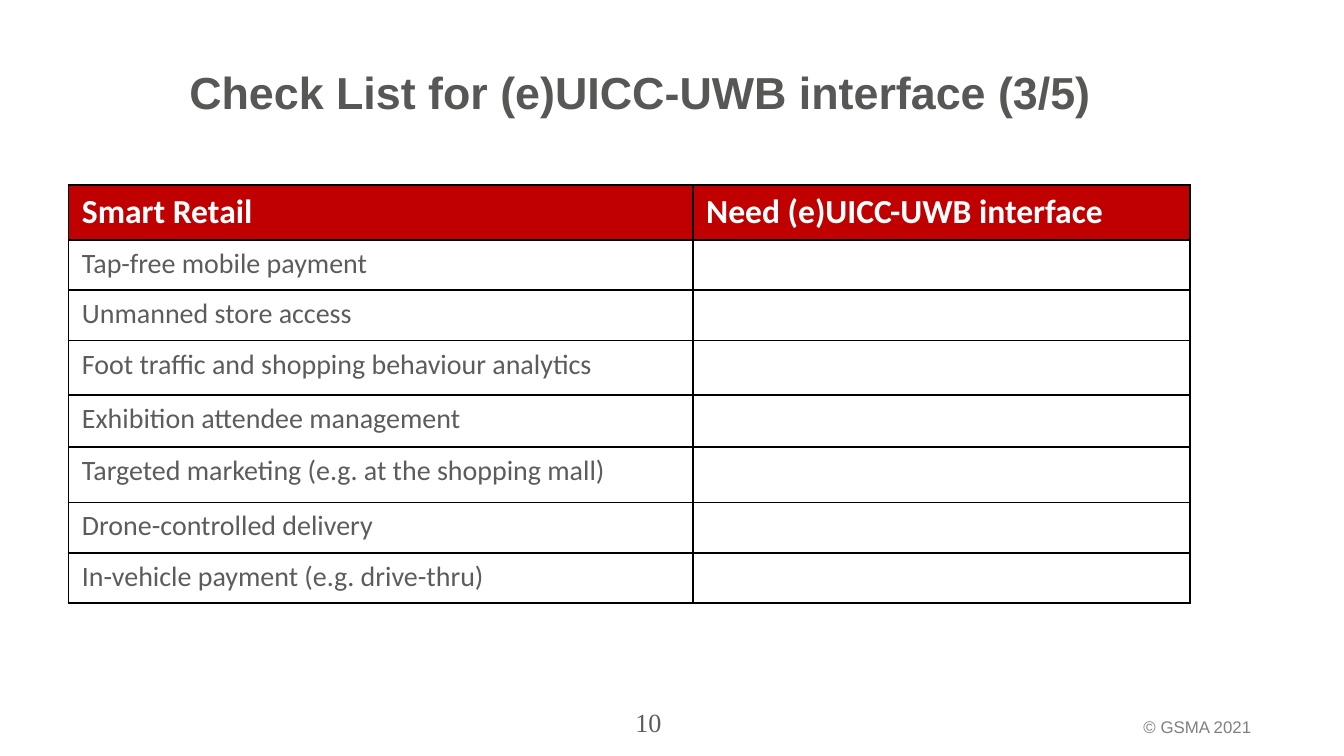
from dataclasses import dataclass

from lxml import etree
from pptx import Presentation
from pptx.dml.color import RGBColor
from pptx.enum import text
from pptx.oxml import ns
from pptx.slide import Slide
from pptx.table import _Cell
from pptx.util import Emu, Pt

PX = 4572  # 200 px to the inch

WHITE = RGBColor(0xFF, 0xFF, 0xFF)
RED = RGBColor(0xC0, 0x00, 0x00)
TITLE_GREY = RGBColor(0x57, 0x57, 0x56)
TEXT_GREY = RGBColor(0x5C, 0x5C, 0x5C)
FOOTER_GREY = RGBColor(0x80, 0x80, 0x80)
BORDER_COLOR = "000000"

HEADINGS = ("Smart Retail", "Need (e)UICC-UWB interface")
USE_CASES = (
    "Tap-free mobile payment",
    "Unmanned store access",
    "Foot traffic and shopping behaviour analytics",
    "Exhibition attendee management",
    "Targeted marketing (e.g. at the shopping mall)",
    "Drone-controlled delivery",
    "In-vehicle payment (e.g. drive-thru)",
)
COLUMN_WIDTHS = (929, 740)
ROW_HEIGHTS = (82, 75, 75, 81, 77, 83, 75, 75)


@dataclass(frozen=True)
class Style:
    name: str
    size: int
    color: RGBColor
    bold: bool = False


@dataclass(frozen=True)
class Label:
    words: str
    left: int
    top: int
    width: int
    height: int
    style: Style
    align: text.PP_ALIGN = text.PP_ALIGN.LEFT


HEADING = Style("Calibri", 18, WHITE, True)
BODY = Style("Calibri", 15, TEXT_GREY)
LABELS = (
    Label("© GSMA 2021", 1682, 1057, 314, 50, Style("Arial", 9, FOOTER_GREY)),
    Label("Check List for (e)UICC-UWB interface (3/5)", 262, 86, 1618, 188,
          Style("Arial", 24, TITLE_GREY, True)),
    Label("10", 732, 1042, 466, 60, Style("Times New Roman", 14, TEXT_GREY),
          text.PP_ALIGN.CENTER),
)


def px(length: int) -> Emu:
    return Emu(length * PX)


def add_span(para, words: str, style: Style) -> None:
    span = para.add_run()
    span.text = words
    formats = {"name": style.name, "size": Pt(style.size), "bold": style.bold}
    for key, value in formats.items():
        setattr(span.font, key, value)
    span.font.color.rgb = style.color


def add_label(page: Slide, label: Label) -> None:
    box = page.shapes.add_textbox(
        *map(px, (label.left, label.top, label.width, label.height)))
    box.text_frame.word_wrap = True
    para = box.text_frame.paragraphs[0]
    para.alignment = label.align
    add_span(para, label.words, label.style)


def add_borders(cell: _Cell) -> None:
    """Draw all four cell edges; they must precede the fill in the XML."""
    properties = cell._tc.get_or_add_tcPr()
    for index, side in enumerate(("lnL", "lnR", "lnT", "lnB")):
        line = etree.Element(ns.qn(f"a:{side}"), w=str(Pt(1)))
        fill = etree.SubElement(line, ns.qn("a:solidFill"))
        etree.SubElement(fill, ns.qn("a:srgbClr"), val=BORDER_COLOR)
        properties.insert(index, line)


def fill_cell(cell: _Cell, words: str, style: Style, color: RGBColor) -> None:
    margins = {"margin_left": 20, "margin_right": 20,
               "margin_top": 10, "margin_bottom": 10}
    for key, value in margins.items():
        setattr(cell, key, px(value))
    cell.fill.solid()
    cell.fill.fore_color.rgb = color
    add_borders(cell)
    para = cell.text_frame.paragraphs[0]
    if words:
        add_span(para, words, style)
    else:  # keeps an empty cell from stretching its row
        etree.SubElement(para._p, ns.qn("a:endParaRPr"), sz=str(style.size * 100))


def add_checklist(page: Slide) -> None:
    frame = page.shapes.add_table(
        len(ROW_HEIGHTS), len(COLUMN_WIDTHS), px(102), px(275),
        px(sum(COLUMN_WIDTHS)), px(sum(ROW_HEIGHTS)))
    table = frame.table
    for column, width in zip(table.columns, COLUMN_WIDTHS):
        column.width = px(width)
    rows = [HEADINGS, *((use_case, "") for use_case in USE_CASES)]
    for index, (row, height, entries) in enumerate(
            zip(table.rows, ROW_HEIGHTS, rows)):
        row.height = px(height)
        style, color = (BODY, WHITE) if index else (HEADING, RED)
        for cell, words in zip(row.cells, entries):
            fill_cell(cell, words, style, color)


def main() -> None:
    deck = Presentation()
    deck.slide_width, deck.slide_height = px(2000), px(1125)
    page = deck.slides.add_slide(deck.slide_layouts[6])
    for label in LABELS:
        add_label(page, label)
    add_checklist(page)
    deck.save("out.pptx")


if __name__ == "__main__":
    main()
